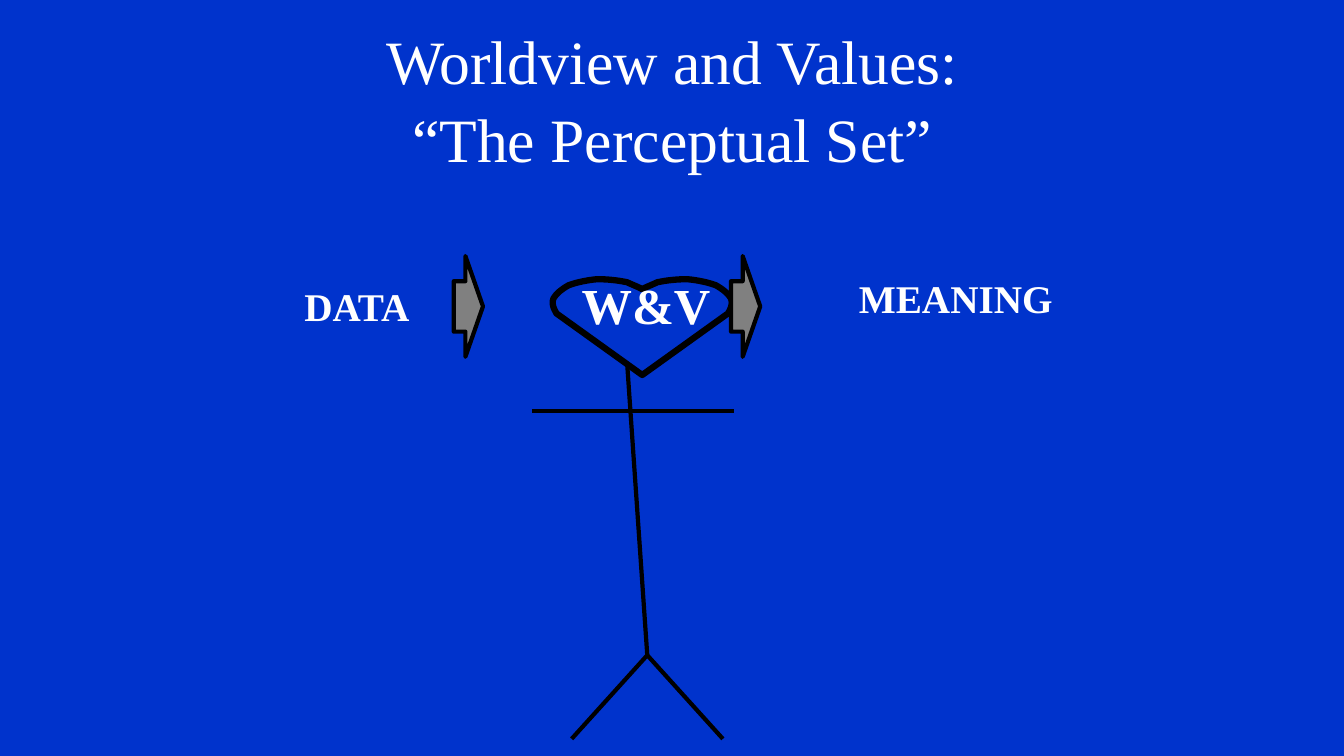
from lxml import etree
from pptx import Presentation
from pptx.dml.color import RGBColor
from pptx.enum.shapes import MSO_CONNECTOR, MSO_SHAPE
from pptx.enum.text import MSO_ANCHOR, MSO_AUTO_SIZE, PP_ALIGN
from pptx.oxml.ns import qn
from pptx.util import Inches, Pt

STRAIGHT = MSO_CONNECTOR.STRAIGHT
RIGHT_ARROW = MSO_SHAPE.RIGHT_ARROW
MIDDLE = MSO_ANCHOR.MIDDLE
NO_FIT = MSO_AUTO_SIZE.NONE
CENTER, LEFT = PP_ALIGN.CENTER, PP_ALIGN.LEFT

COLORS = {"background": "0033CC", "text": "FFFFFF", "outline": "000000", "arrow": "808080"}
FONT = "Times New Roman"
CURVE_STEPS = 8

HEART_LOBE = [
    [(0, 0.1), (-0.03, 0.08), (-0.11, 0.05), (-0.15, 0.03)],
    [(-0.15, 0.03), (-0.25, 0.01), (-0.34, 0), (-0.45, 0)],
    [(-0.45, 0), (-0.55, 0.01), (-0.65, 0.03), (-0.73, 0.06)],
    [(-0.73, 0.06), (-0.8, 0.1), (-0.85, 0.14), (-0.88, 0.19)],
    [(-0.88, 0.19), (-0.9, 0.24), (-0.88, 0.29), (-0.85, 0.34)],
]
HEART_TIP = (0, 0.95)
LIMBS = [
    ((0.94, 0.83), (1.14, 3.73)),
    ((1.14, 3.73), (0.39, 4.56)),
    ((1.14, 3.73), (1.89, 4.56)),
    ((0, 1.31), (2, 1.31)),
]


def color(name):
    return RGBColor.from_string(COLORS[name])


def style_outline(line, width):
    line.color.rgb = color("outline")
    line.width = Pt(width)


def write(frame, text, size, align, bold=False):
    frame.text = text
    paragraph = frame.paragraphs[0]
    paragraph.alignment = align
    font = paragraph.font
    font.name, font.size, font.bold = FONT, Pt(size), bold
    font.color.rgb = color("text")
    return paragraph


def add_title(slide, left, top, width, height):
    title = slide.shapes.title
    title.left, title.top = Inches(left), Inches(top)
    title.width, title.height = Inches(width), Inches(height)
    frame = title.text_frame
    frame.auto_size = NO_FIT
    frame.vertical_anchor = MIDDLE
    heading = write(frame, "Worldview and Values:\v“The Perceptual Set”", 44, CENTER)
    heading.line_spacing = 1.05


def curve_points(start, first, second, end):
    for step in range(1, CURVE_STEPS + 1):
        t = step / CURVE_STEPS
        weights = ((1 - t) ** 3, 3 * t * (1 - t) ** 2, 3 * t**2 * (1 - t), t**3)
        yield tuple(
            sum(w * p[axis] for w, p in zip(weights, (start, first, second, end)))
            for axis in (0, 1)
        )


def add_heart(shapes, center, top):
    lobe = [HEART_LOBE[0][0]] + [p for curve in HEART_LOBE for p in curve_points(*curve)]
    mirrored = [(-x, y) for x, y in reversed(lobe[1:])]
    outline = [(Inches(center + x), Inches(top + y)) for x, y in lobe + [HEART_TIP] + mirrored]
    builder = shapes.build_freeform(*outline[0], scale=1.0)
    builder.add_line_segments(outline[1:], close=True)
    heart = builder.convert_to_shape()
    heart.shadow.inherit = False
    heart.fill.background()
    style_outline(heart.line, 4.5)


def add_figure(slide, left, top):
    parts = slide.shapes.add_group_shape().shapes
    add_heart(parts, left + 1.09, top)
    for (x1, y1), (x2, y2) in LIMBS:
        limb = parts.add_connector(
            STRAIGHT, Inches(left + x1), Inches(top + y1), Inches(left + x2), Inches(top + y2)
        )
        style_outline(limb.line, 3)
        etree.SubElement(limb._element.spPr, qn("a:effectLst"))
    for offset in (-0.78, 1.97):
        arrow = parts.add_shape(
            RIGHT_ARROW, Inches(left + offset), Inches(top - 0.23), Inches(0.29), Inches(1)
        )
        arrow.adjustments[0], arrow.adjustments[1] = 0.5, 0.6
        arrow.shadow.inherit = False
        arrow.fill.solid()
        arrow.fill.fore_color.rgb = color("arrow")
        style_outline(arrow.line, 3)


def add_label(slide, text, size, left, top, width, height):
    label = slide.shapes.add_textbox(Inches(left), Inches(top), Inches(width), Inches(height))
    label.text_frame.word_wrap = True
    write(label.text_frame, text, size, LEFT, bold=True).space_before = Pt(3)


def main():
    deck = Presentation()
    deck.slide_width, deck.slide_height = Inches(13.33), Inches(7.5)
    slide = deck.slides.add_slide(deck.slide_layouts[5])
    slide.background.fill.solid()
    slide.background.fill.fore_color.rgb = color("background")
    add_title(slide, 2.42, 0, 8.5, 1.92)
    add_figure(slide, 5.28, 2.77)
    add_label(slide, "DATA", 28, 2.92, 2.75, 1.3, 0.57)
    add_label(slide, "MEANING", 28, 8.42, 2.67, 2.12, 0.57)
    add_label(slide, "W&V", 36, 5.67, 2.67, 1.58, 0.7)
    deck.save("out.pptx")


if __name__ == "__main__":
    main()
